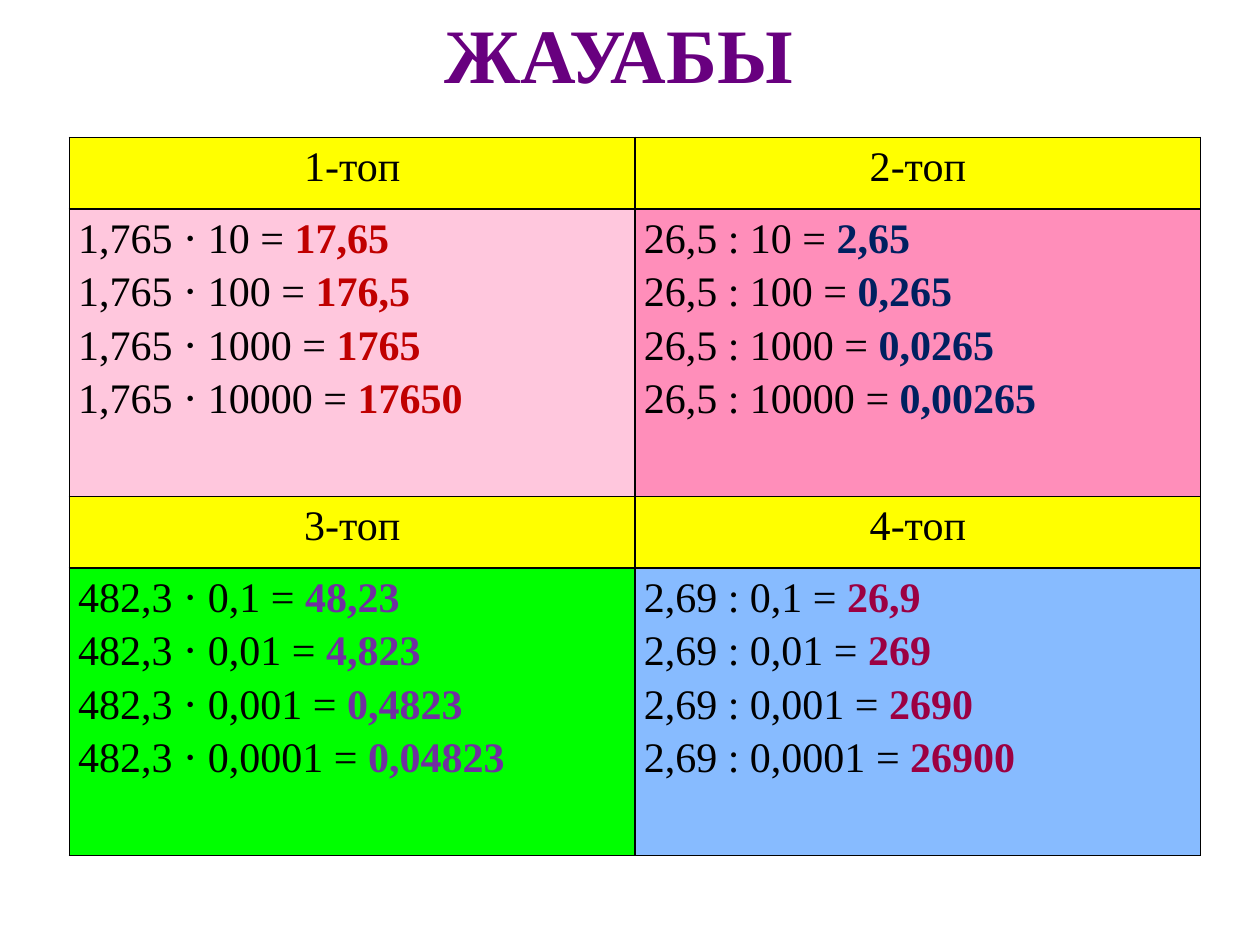
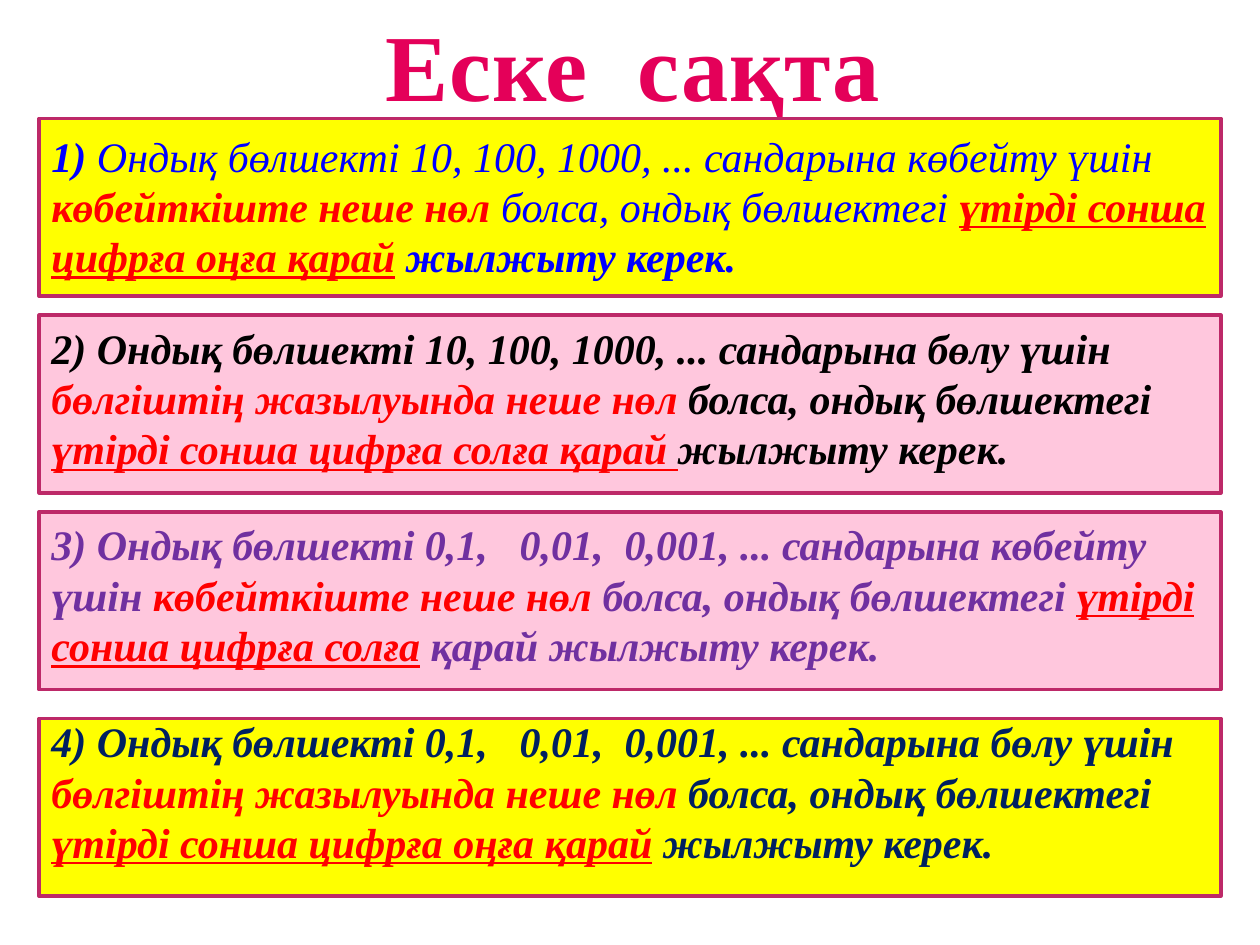
from lxml import etree
from pptx import Presentation
from pptx import util as u
from pptx.dml.color import RGBColor
from pptx.enum import shapes, text
from pptx.oxml import ns

WIDTH, HEIGHT = u.Inches(10), u.Inches(7.5)
FONT = "Times New Roman"
BODY_SIZE = 24
BLACK, YELLOW, PINK, RED = "000000", "FFFF00", "FFC7DD", "FF0000"
FRAME = "BD2968"
BLUE, PURPLE, NAVY = "0000FF", "7030A0", "002060"

GROUPS = [
    ("1-топ", PINK, "C00000", [
        ("1,765 ⋅ 10", "17,65"), ("1,765 ⋅ 100", "176,5"),
        ("1,765 ⋅ 1000", "1765"), ("1,765 ⋅ 10000", "17650")]),
    ("2-топ", "FF8EBA", NAVY, [
        ("26,5 : 10", "2,65"), ("26,5 : 100", "0,265"),
        ("26,5 : 1000", "0,0265"), ("26,5 : 10000", "0,00265")]),
    ("3-топ", "00FF00", PURPLE, [
        ("482,3 ⋅ 0,1", "48,23"), ("482,3 ⋅ 0,01", "4,823"),
        ("482,3 ⋅ 0,001", "0,4823"), ("482,3 ⋅ 0,0001", "0,04823")]),
    ("4-топ", "87BBFF", "9C0042", [
        ("2,69 : 0,1", "26,9"), ("2,69 : 0,01", "269"),
        ("2,69 : 0,001", "2690"), ("2,69 : 0,0001", "26900")]),
]


def decimals(start, colour, end):
    """Return the opening spans of a rule about 0,1, 0,01 and 0,001."""
    return [(start + " 0,1,", colour, "bi"), (" ", colour, "bi", 12),
            ("0,01,", colour, "bi"), (" ", colour, "bi", 6),
            ("0,001, ... " + end, colour, "bi")]


RULES = [
    (YELLOW, [
        ("1) ", BLUE, "bi"),
        ("Ондық бөлшекті 10, 100, 1000, ... сандарына көбейту үшін ", BLUE, "i"),
        ("көбейткіште неше нөл ", RED, "bi"),
        ("болса, ондық бөлшектегі ", BLUE, "i"),
        ("үтірді сонша цифрға оңға қарай", RED, "biu"),
        (" жылжыту керек.", BLUE, "bi")]),
    (PINK, [
        ("2) Ондық бөлшекті 10, 100, 1000, ... сандарына бөлу үшін ", BLACK, "bi"),
        ("бөлгіштің жазылуында неше нөл ", RED, "bi"),
        ("болса, ондық бөлшектегі ", BLACK, "bi"),
        ("үтірді сонша цифрға солға қарай ", RED, "biu"),
        ("жылжыту керек.", BLACK, "bi")]),
    (PINK, decimals("3) Ондық бөлшекті", PURPLE, "сандарына көбейту үшін ") + [
        ("көбейткіште неше нөл ", RED, "bi"),
        ("болса, ондық бөлшектегі ", PURPLE, "bi"),
        ("үтірді сонша цифрға солға", RED, "biu"),
        (" қарай жылжыту керек.", PURPLE, "bi")]),
    (YELLOW, decimals("4) Ондық бөлшекті", NAVY, "сандарына бөлу үшін ") + [
        ("бөлгіштің жазылуында неше нөл ", RED, "bi"),
        ("болса, ондық бөлшектегі ", NAVY, "bi"),
        ("үтірді сонша цифрға оңға қарай", RED, "biu"),
        (" жылжыту керек.", NAVY, "bi")]),
]


def rgb(colour):
    """Turn a hex string into a colour."""
    return RGBColor.from_string(colour)


def area(left, top, width, height):
    """Turn percentages of the slide into left, top, width and height."""
    return (int(WIDTH * left / 100), int(HEIGHT * top / 100),
            int(WIDTH * width / 100), int(HEIGHT * height / 100))


def add_span(para, words, colour, style="", spacing=0, size=BODY_SIZE):
    """Add a run; style holds b, i or u, spacing is in points."""
    span = para.add_run()
    span.text = words
    font = span.font
    font.name, font.size = FONT, u.Pt(size)
    font.color.rgb = rgb(colour)
    font.bold, font.italic = "b" in style, "i" in style
    font.underline = "u" in style
    if spacing:
        span._r.get_or_add_rPr().set("spc", str(int(spacing * 100)))


def add_page(deck, place, size, spans):
    """Add a slide whose centred title is made of the given spans."""
    page = deck.slides.add_slide(deck.slide_layouts[5])
    title = page.shapes.title
    title.left, title.top, title.width, title.height = area(*place)
    frame = title.text_frame
    frame.word_wrap = False
    frame.auto_size = text.MSO_AUTO_SIZE.NONE
    para = frame.paragraphs[0]
    para.alignment = text.PP_ALIGN.CENTER
    for span in spans:
        add_span(para, *span, size=size)
    return page


def add_borders(cell):
    """Draw a thin black line on the four sides of a cell."""
    properties = cell._tc.get_or_add_tcPr()
    for index, side in enumerate(("lnL", "lnR", "lnT", "lnB")):
        line = etree.Element(ns.qn("a:" + side), w=str(u.Pt(1)))
        fill = etree.SubElement(line, ns.qn("a:solidFill"))
        etree.SubElement(fill, ns.qn("a:srgbClr"), val=BLACK)
        properties.insert(index, line)


def fill_cell(cell, colour, lines, alignment):
    """Fill a cell with colour and with one paragraph for each line of spans."""
    cell.fill.solid()
    cell.fill.fore_color.rgb = rgb(colour)
    cell.margin_left = cell.margin_right = u.Inches(0.07)
    cell.margin_top = cell.margin_bottom = 0
    add_borders(cell)
    frame = cell.text_frame
    for index, spans in enumerate(lines):
        para = frame.add_paragraph() if index else frame.paragraphs[0]
        para.alignment = alignment
        para.line_spacing = 1.15
        for span in spans:
            add_span(para, *span)


def add_answers(page):
    """Add the two by two table of groups, each a heading over its answers."""
    place = area(5.5, 14.53, 89.8, 76)
    table = page.shapes.add_table(4, 2, *place).table
    for index, row in enumerate(table.rows):
        row.height = int(place[3] * (0.4 if index % 2 else 0.1))
    for index, (heading, colour, accent, sums) in enumerate(GROUPS):
        row, column = index // 2 * 2, index % 2
        lines = [[(task + " = ", BLACK), (answer, accent, "b")]
                 for task, answer in sums]
        fill_cell(table.cell(row, column), YELLOW, [[(heading, BLACK)]],
                  text.PP_ALIGN.CENTER)
        fill_cell(table.cell(row + 1, column), colour, lines,
                  text.PP_ALIGN.LEFT)


def add_panel(page, top, colour):
    """Add a framed rectangle behind a rule."""
    panel = page.shapes.add_shape(shapes.MSO_SHAPE.RECTANGLE,
                                  *area(3.1, top, 93.8, 18.8))
    panel.shadow.inherit = False
    panel.fill.solid()
    panel.fill.fore_color.rgb = rgb(colour)
    panel.line.color.rgb = rgb(FRAME)
    panel.line.width = u.Pt(2)


def add_rule(page, top, spans):
    """Add the text of a rule."""
    box = page.shapes.add_textbox(*area(3.1, top, 96.9, 17.47))
    frame = box.text_frame
    frame.word_wrap = True
    frame.vertical_anchor = text.MSO_ANCHOR.MIDDLE
    for span in spans:
        add_span(frame.paragraphs[0], *span)


def main():
    """Build the answers slide and the rules slide."""
    deck = Presentation()
    deck.slide_width, deck.slide_height = WIDTH, HEIGHT

    answers = add_page(deck, (34.1, 0, 30, 11.2), 44,
                       [("ЖАУАБЫ", "68007F", "b")])
    add_answers(answers)

    pink = "E40059"
    rules = add_page(deck, (29.4, 0, 41.7, 13.47), 54,
                     [("Еске", pink, "b", 0.5), (" ", pink, "b", 14.5),
                      ("сақта", pink, "b", 0.5)])
    panel_shifts, text_shifts = (0, 0, 0, 1), (0.5, 0, 0, 0)
    for index, (colour, spans) in enumerate(RULES):
        top = 12.53 + 20.83 * index
        add_panel(rules, top + panel_shifts[index], colour)
        add_rule(rules, top + text_shifts[index], spans)

    deck.save("out.pptx")


if __name__ == "__main__":
    main()
